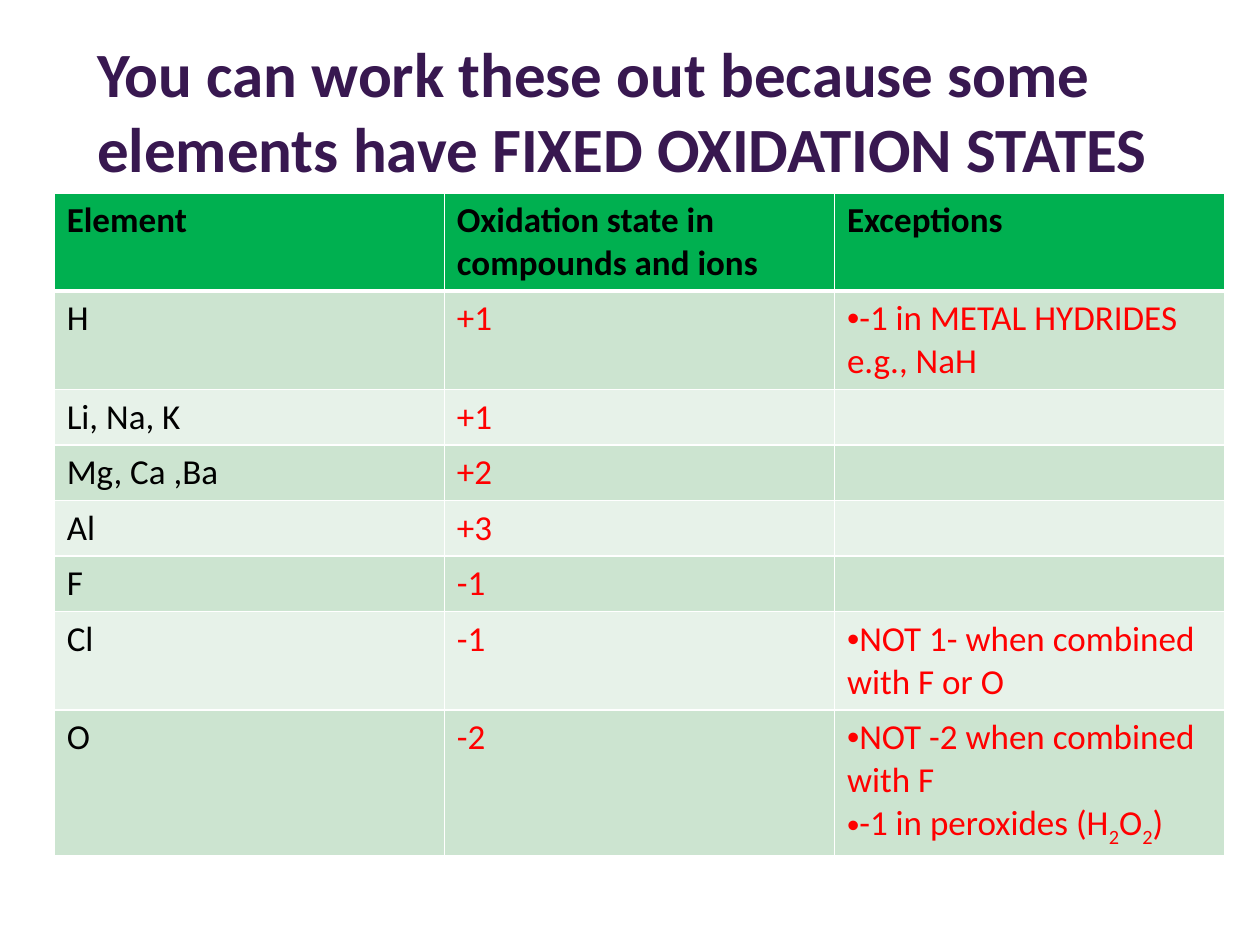
from dataclasses import dataclass

from lxml import etree
from pptx import Presentation
from pptx.dml.color import RGBColor
from pptx.enum import text
from pptx.oxml import ns
from pptx.util import Inches, Pt


@dataclass(frozen=True)
class Theme:
    face: str = "Calibri"
    title_size: int = 36
    table_size: int = 20
    title: str = "381850"
    ink: str = "000000"
    answer: str = "FF0000"
    header: str = "00B050"
    bands: tuple[str, str] = ("CCE4D0", "E7F2E9")
    rule: str = "FFFFFF"
    thin: int = 1
    thick: int = 3


@dataclass(frozen=True)
class ElementRow:
    element: str
    state: str
    exceptions: tuple[str, ...] = ()


THEME = Theme()
HEADINGS = ("Element", "Oxidation state in compounds and ions", "Exceptions")
ELEMENTS = (
    ElementRow("H", "+1", ("-1 in METAL HYDRIDES e.g., NaH",)),
    ElementRow("Li, Na, K", "+1"),
    ElementRow("Mg, Ca ,Ba", "+2"),
    ElementRow("Al", "+3"),
    ElementRow("F", "-1"),
    ElementRow("Cl", "-1", ("NOT 1- when combined with F or O",)),
    ElementRow("O", "-2", ("NOT -2 when combined with F", "-1 in peroxides (H_2_O_2_)")),
)


def format_paragraph(paragraph, size: int, colour: str, bold: bool) -> None:
    font = paragraph.font
    font.name = THEME.face
    font.size = Pt(size)
    font.bold = bold
    font.color.rgb = RGBColor.from_string(colour)


def add_bullet(paragraph) -> None:
    properties = paragraph._p.get_or_add_pPr()
    properties.set("marL", "0")
    properties.set("indent", "0")
    bullet = etree.Element(ns.qn("a:buChar"), char="•")
    face = etree.Element(ns.qn("a:buFont"), typeface="Arial")
    properties.insert(0, bullet)
    properties.insert(0, face)


def add_formula_runs(paragraph, wording: str) -> None:
    for index, part in enumerate(wording.split("_")):
        run = paragraph.add_run()
        run.text = part
        if index % 2:
            run.font._element.set("baseline", "-25000")


def draw_borders(cell, top: int, bottom: int) -> None:
    properties = cell._tc.get_or_add_tcPr()
    sides = (("lnL", THEME.thin), ("lnR", THEME.thin), ("lnT", top), ("lnB", bottom))
    for position, (side, width) in enumerate(sides):
        line = etree.Element(ns.qn(f"a:{side}"), w=str(Pt(width)))
        fill = etree.SubElement(line, ns.qn("a:solidFill"))
        etree.SubElement(fill, ns.qn("a:srgbClr"), val=THEME.rule)
        properties.insert(position, line)


def fill_cell(cell, lines: tuple[str, ...], fill: str, colour: str,
              bold: bool = False, bulleted: bool = False) -> None:
    cell.fill.solid()
    cell.fill.fore_color.rgb = RGBColor.from_string(fill)
    for index, wording in enumerate(lines):
        frame = cell.text_frame
        paragraph = frame.add_paragraph() if index else frame.paragraphs[0]
        add_formula_runs(paragraph, wording)
        format_paragraph(paragraph, THEME.table_size, colour, bold)
        if bulleted:
            add_bullet(paragraph)


def add_title(slide) -> None:
    title = slide.shapes.title
    title.left, title.top = Inches(0.67), Inches(0.52)
    title.width, title.height = Inches(9.84), Inches(0.7)
    frame = title.text_frame
    frame.text = "You can work these out because some elements have FIXED OXIDATION STATES"
    frame.word_wrap = True
    frame.auto_size = text.MSO_AUTO_SIZE.NONE
    frame.vertical_anchor = text.MSO_ANCHOR.MIDDLE
    paragraph = frame.paragraphs[0]
    paragraph.alignment = text.PP_ALIGN.LEFT
    format_paragraph(paragraph, THEME.title_size, THEME.title, True)


def add_oxidation_table(slide) -> None:
    holder = slide.shapes.add_table(
        len(ELEMENTS) + 1, len(HEADINGS),
        Inches(0.43), Inches(1.53), Inches(9.29), Inches(5.13))
    table = holder.table
    table.first_row = False
    table.horz_banding = False
    for row in table.rows:
        row.height = Inches(0.41)
    holder.height = Inches(5.13)

    for column, heading in enumerate(HEADINGS):
        cell = table.cell(0, column)
        fill_cell(cell, (heading,), THEME.header, THEME.ink, bold=True)
        draw_borders(cell, THEME.thin, THEME.thick)

    for number, entry in enumerate(ELEMENTS, start=1):
        band = THEME.bands[(number - 1) % 2]
        element, state, exceptions = table.rows[number].cells
        fill_cell(element, (entry.element,), band, THEME.ink)
        fill_cell(state, (entry.state,), band, THEME.answer)
        fill_cell(exceptions, entry.exceptions, band, THEME.answer, bulleted=True)
        for cell in (element, state, exceptions):
            draw_borders(cell, THEME.thick if number == 1 else THEME.thin, THEME.thin)


def main() -> None:
    presentation = Presentation()
    presentation.slide_width = Inches(10)
    presentation.slide_height = Inches(7.5)
    slide = presentation.slides.add_slide(presentation.slide_layouts[5])
    add_title(slide)
    add_oxidation_table(slide)
    presentation.save("out.pptx")


if __name__ == "__main__":
    main()
